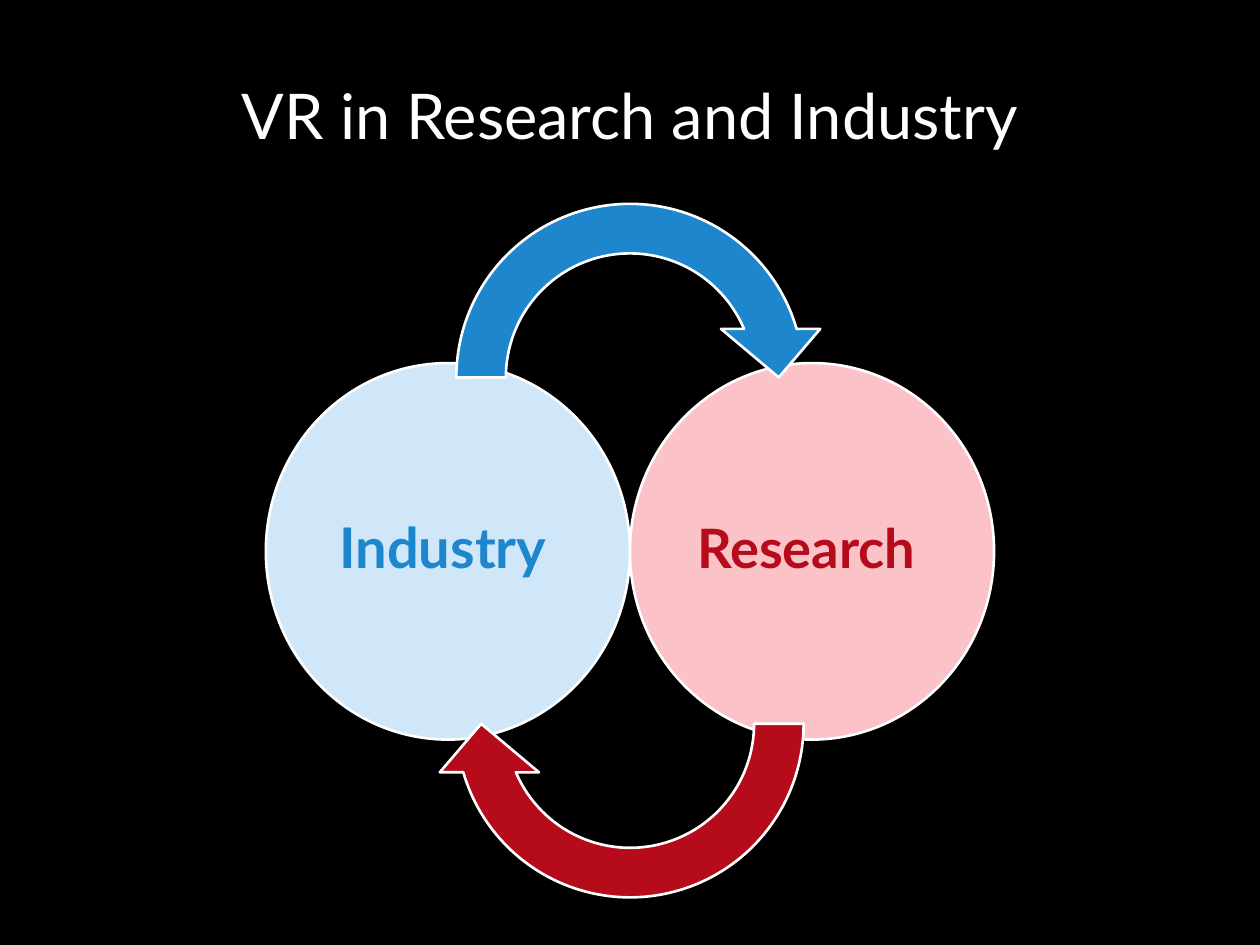
from typing import NamedTuple

from pptx import Presentation
from pptx import util as u
from pptx.dml.color import RGBColor
from pptx.enum import shapes, text

WHITE = "FFFFFF"
BLUE = "1D86CD"
RED = "B50B1B"
KIND = shapes.MSO_SHAPE


class Box(NamedTuple):
    left: float
    top: float
    width: float
    height: float


class Form(NamedTuple):
    kind: KIND
    box: Box
    fill: str
    turn: int = 0
    bends: tuple = ()


class Label(NamedTuple):
    words: str
    box: Box
    size: int
    hue: str
    bold: bool = True
    pads: tuple = (0.25, 0.13, 0.25, 0.13)
    pitch: float = 0.9


BENDS = (0.125, 11.42, 204.58, 108, 0.125)
FORMS = [
    Form(KIND.OVAL, Box(5.36, 7.32, 7.34, 7.59), "CFE7F8"),
    Form(KIND.OVAL, Box(12.7, 7.32, 7.34, 7.59), "FBC3C8"),
    Form(KIND.CIRCULAR_ARROW, Box(8.7, 3.61, 8, 8), BLUE, 0, BENDS),
    Form(KIND.CIRCULAR_ARROW, Box(8.7, 10.59, 8, 8), RED, 180, BENDS),
]
LABELS = [
    Label("VR in Research and Industry", Box(1.9, 0.33, 21.6, 3.96), 36, WHITE,
          bold=False, pitch=1),
    Label("Industry", Box(6.43, 8.41, 5.18, 5.38), 32, BLUE,
          pads=(0.33, 0.56, 0.51, 0.56)),
    Label("Research", Box(12.7, 7.67, 6.96, 6.88), 31, RED,
          pads=(0.48, 0.56, 0.33, 0.56)),
]


def paint(part, hue: str) -> None:
    part.solid()
    part.fore_color.rgb = RGBColor.from_string(hue)


def place(box: Box) -> list:
    return [u.Cm(side) for side in box]


def draw_form(slide, form: Form) -> None:
    shape = slide.shapes.add_shape(form.kind, *place(form.box))
    shape.shadow.inherit = False
    shape.rotation = form.turn
    for i, bend in enumerate(form.bends):
        shape.adjustments[i] = bend
    paint(shape.fill, form.fill)
    paint(shape.line.fill, WHITE)
    shape.line.width = u.Pt(1.5)


def draw_label(slide, label: Label) -> None:
    frame = slide.shapes.add_textbox(*place(label.box)).text_frame
    frame.word_wrap = True
    frame.vertical_anchor = text.MSO_ANCHOR.MIDDLE
    (frame.margin_left, frame.margin_top,
     frame.margin_right, frame.margin_bottom) = map(u.Cm, label.pads)
    frame.text = label.words
    line = frame.paragraphs[0]
    line.alignment = text.PP_ALIGN.CENTER
    line.line_spacing = label.pitch
    font = line.runs[0].font
    font.name = "Lato"
    font.size = u.Pt(label.size)
    font.bold = label.bold
    paint(font.fill, label.hue)


def main() -> None:
    deck = Presentation()
    deck.slide_width, deck.slide_height = u.Cm(25.4), u.Cm(19.05)
    slide = deck.slides.add_slide(deck.slide_layouts[6])
    paint(slide.background.fill, "000000")
    for form in FORMS:
        draw_form(slide, form)
    for label in LABELS:
        draw_label(slide, label)
    deck.save("out.pptx")


if __name__ == "__main__":
    main()
